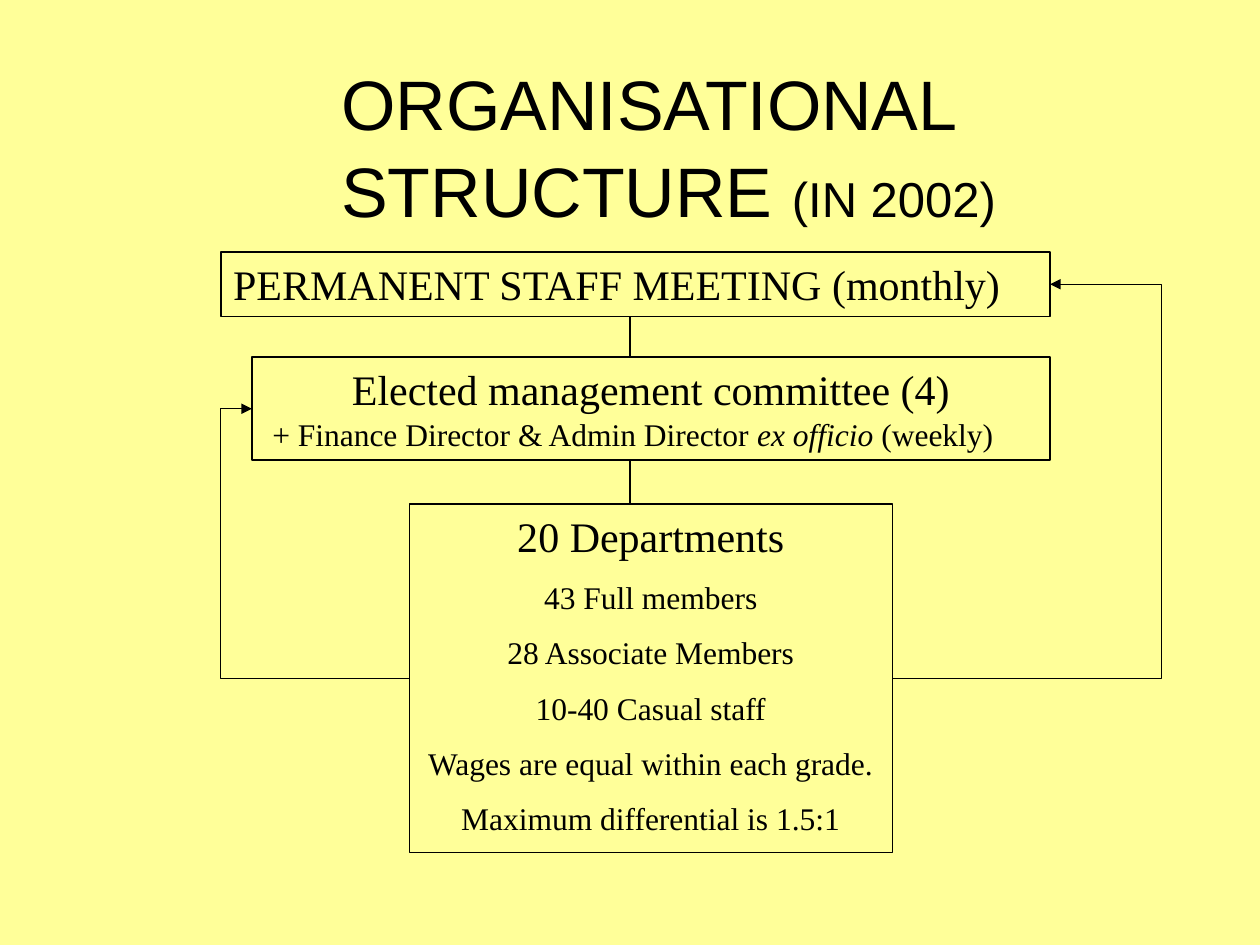
from lxml.etree import SubElement
from pptx import Presentation
from pptx.dml.color import RGBColor
from pptx.enum.shapes import MSO_CONNECTOR, MSO_SHAPE
from pptx.enum.text import MSO_ANCHOR, MSO_AUTO_SIZE, PP_ALIGN
from pptx.oxml.ns import qn
from pptx.util import Cm, Pt

COLOURS = {"background": "FFFF99", "ink": "000000"}
HEADING, DETAIL = 24, 18
LEFT, CENTRE = PP_ALIGN.LEFT, PP_ALIGN.CENTER

TITLE = [("ORGANISATIONAL STRUCTURE ", 40, False), ("(IN 2002)", 28, False)]
DEPARTMENT_FACTS = [
    "43 Full members",
    "28 Associate Members",
    "10-40 Casual staff",
    "Wages are equal within each grade.",
    "Maximum differential is 1.5:1",
]

# Each box: left, top, width, height (cm), line width (pt), paragraphs.
# Each paragraph: alignment, line spacing, runs of (text, size, italic).
BOXES = {
    "meeting": (4.45, 5.08, 16.72, 1.3, 1, [
        (LEFT, 1.0, [("PERMANENT STAFF MEETING (monthly)", HEADING, False)]),
    ]),
    "committee": (5.08, 7.2, 16.09, 2.08, 1, [
        (CENTRE, 1.0, [("Elected management committee (4)", HEADING, False)]),
        (LEFT, 0.5, [
            ("+ Finance Director & Admin Director ", DETAIL, False),
            ("ex officio", DETAIL, True),
            (" (weekly)", DETAIL, False),
        ]),
    ]),
    "departments": (8.25, 10.16, 9.74, 7.03, 0.75, [
        (CENTRE, 1.0, [("20 Departments", HEADING, False)]),
        *[(CENTRE, 1.0, [(fact, DETAIL, False)]) for fact in DEPARTMENT_FACTS],
    ]),
}
STEM_X = 12.7
RIGHT_LANE_X, LEFT_LANE_X = 23.42, 4.45


def colour(name):
    return RGBColor.from_string(COLOURS[name])


def add_runs(paragraph, runs, font_name):
    for text, size, italic in runs:
        run = paragraph.add_run()
        run.text = text
        run.font.name = font_name
        run.font.size = Pt(size)
        run.font.italic = italic
        run.font.color.rgb = colour("ink")


def add_title(slide):
    title = slide.shapes.title
    title.left, title.top, title.width, title.height = Cm(2.74), Cm(1.27), Cm(21.59), Cm(3.18)
    frame = title.text_frame
    frame.auto_size = MSO_AUTO_SIZE.NONE
    frame.word_wrap = True
    frame.vertical_anchor = MSO_ANCHOR.MIDDLE
    frame.margin_left, frame.margin_top = Cm(4.14), Cm(0.23)
    paragraph = frame.paragraphs[0]
    paragraph.alignment = LEFT
    paragraph.line_spacing = 1.04
    add_runs(paragraph, TITLE, "Arial")


def add_box(slide, left, top, width, height, line_width, paragraphs):
    shape = slide.shapes.add_shape(
        MSO_SHAPE.RECTANGLE, Cm(left), Cm(top), Cm(width), Cm(height))
    shape.shadow.inherit = False
    shape.fill.background()
    shape.line.color.rgb = colour("ink")
    shape.line.width = Pt(line_width)
    frame = shape.text_frame
    frame.word_wrap = True
    frame.vertical_anchor = MSO_ANCHOR.TOP
    for index, (alignment, spacing, runs) in enumerate(paragraphs):
        paragraph = frame.add_paragraph() if index else frame.paragraphs[0]
        paragraph.alignment = alignment
        paragraph.line_spacing = spacing
        if index:
            paragraph.space_before = Pt(10)
            if alignment == LEFT:
                properties = paragraph._p.get_or_add_pPr()
                properties.set("marL", str(Cm(0.16)))
        add_runs(paragraph, runs, "Times New Roman")


def add_line(slide, start, end, lane_x=None):
    """Draw a plain line, or an elbow arrow that runs along lane_x."""
    kind = MSO_CONNECTOR.STRAIGHT if lane_x is None else MSO_CONNECTOR.ELBOW
    connector = slide.shapes.add_connector(
        kind, *[Cm(value) for value in (*start, *end)])
    connector.line.color.rgb = colour("ink")
    connector.line.width = Pt(0.75)
    properties = connector._element.spPr
    if lane_x is not None:
        bend = round((lane_x - start[0]) / (end[0] - start[0]) * 100000)
        adjustments = properties.find(qn("a:prstGeom")).get_or_add_avLst()
        SubElement(adjustments, qn("a:gd"), name="adj1", fmla=f"val {bend}")
        SubElement(properties.find(qn("a:ln")), qn("a:tailEnd"), type="triangle")
    SubElement(properties, qn("a:effectLst"))


def side(name, which):
    """Return the middle of a box's left or right side."""
    left, top, width, height = BOXES[name][:4]
    return (left if which == "left" else left + width, top + height / 2)


def main():
    presentation = Presentation()
    presentation.slide_width, presentation.slide_height = Cm(25.4), Cm(19.05)
    slide = presentation.slides.add_slide(presentation.slide_layouts[5])
    slide.background.fill.solid()
    slide.background.fill.fore_color.rgb = colour("background")

    add_title(slide)
    for box in BOXES.values():
        add_box(slide, *box)

    boxes = list(BOXES.values())
    for upper, lower in zip(boxes, boxes[1:]):
        add_line(slide, (STEM_X, upper[1] + upper[3]), (STEM_X, lower[1]))
    add_line(slide, side("departments", "right"), side("meeting", "right"), RIGHT_LANE_X)
    add_line(slide, side("departments", "left"), side("committee", "left"), LEFT_LANE_X)

    presentation.save("out.pptx")


if __name__ == "__main__":
    main()
